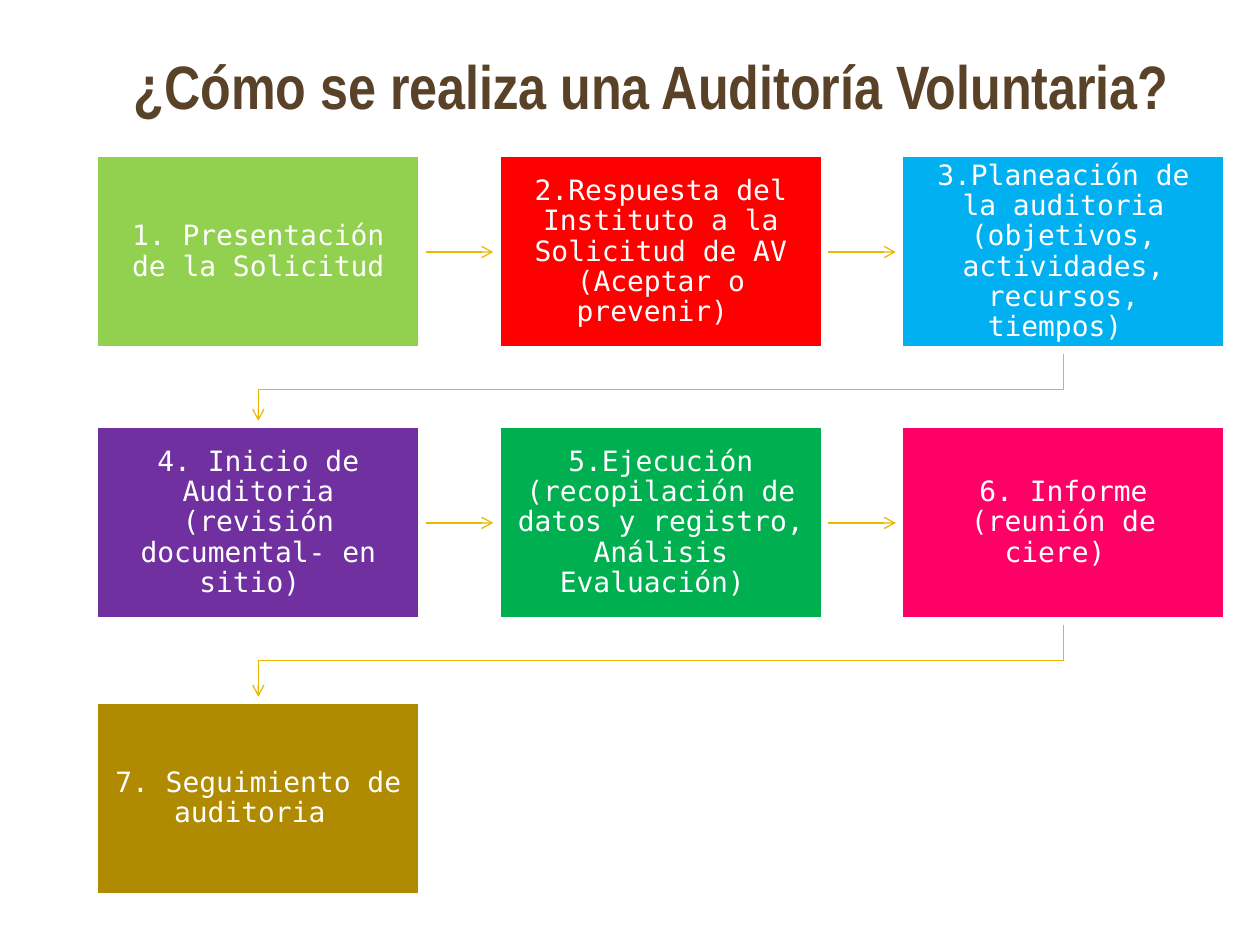
from dataclasses import dataclass

from lxml import etree
from pptx import Presentation
from pptx.dml.color import RGBColor
from pptx.enum.shapes import MSO_CONNECTOR, MSO_SHAPE
from pptx.enum.text import MSO_ANCHOR, PP_ALIGN
from pptx.oxml.ns import qn
from pptx.util import Inches, Pt

RECT = MSO_SHAPE.RECTANGLE
STRAIGHT = MSO_CONNECTOR.STRAIGHT
MIDDLE = MSO_ANCHOR.MIDDLE
CENTER = PP_ALIGN.CENTER
RIGHT_SIDE = 3


@dataclass(frozen=True)
class Theme:
    title_font: str = "Arial Narrow"
    body_font: str = "DejaVu Sans Mono"
    title_size: int = 35
    body_size: int = 16
    title_color: str = "594228"
    white: str = "FFFFFF"
    arrow: str = "EAB800"
    arrow_width: float = 0.75
    border_width: float = 4.33


class FlowSlide:
    LEFT, LAST_LEFT, COLS = 0.75, 7.14, 3
    ROW_TOPS = (1.22, 3.37, 5.56)
    BOX_W, BOX_H = 2.6, 1.56
    CLEARANCE, TURN = 0.03, 0.31

    def __init__(self, prs, theme):
        self.theme = theme
        self.s = prs.slides.add_slide(prs.slide_layouts[6])

    def cell(self, index):
        row, col = divmod(index, self.COLS)
        pitch = (self.LAST_LEFT - self.LEFT) / (self.COLS - 1)
        return self.LEFT + col * pitch, self.ROW_TOPS[row]

    def style_text(self, tf, text, font, size, color, inset, bold=False):
        tf.word_wrap = True
        tf.margin_left = tf.margin_right = Inches(inset)
        tf.margin_top = tf.margin_bottom = Inches(inset)
        tf.text = text
        p = tf.paragraphs[0]
        r = p.runs[0]
        r.font.name, r.font.size, r.font.bold = font, Pt(size), bold
        r.font.color.rgb = RGBColor.from_string(color)
        return p

    def title(self, text, left, top, width, height):
        t = self.theme
        sp = self.s.shapes.add_textbox(*map(Inches, (left, top, width, height)))
        self.style_text(sp.text_frame, text, t.title_font, t.title_size,
                        t.title_color, 0.05, bold=True)
        sp.text_frame.margin_top = Inches(0.1)

    def box(self, index, text, color):
        t = self.theme
        x, y = self.cell(index)
        sp = self.s.shapes.add_shape(
            RECT, *map(Inches, (x, y, self.BOX_W, self.BOX_H)))
        sp.shadow.inherit = False
        sp.fill.solid()
        sp.fill.fore_color.rgb = RGBColor.from_string(color)
        sp.line.color.rgb = RGBColor.from_string(t.white)
        sp.line.width = Pt(t.border_width)
        tf = sp.text_frame
        p = self.style_text(tf, text, t.body_font, t.body_size, t.white, 0.12)
        tf.vertical_anchor = MIDDLE
        p.alignment = CENTER
        p.line_spacing = 0.9
        return sp

    def style_arrow(self, sp):
        sp.line.color.rgb = RGBColor.from_string(self.theme.arrow)
        sp.line.width = Pt(self.theme.arrow_width)
        etree.SubElement(sp.line._get_or_add_ln(), qn("a:tailEnd"), type="arrow")

    def straight_arrow(self, index):
        x, y = self.cell(index)
        next_x, _ = self.cell(index + 1)
        mid = y + self.BOX_H / 2
        line = self.s.shapes.add_connector(STRAIGHT, *map(Inches, (
            x + self.BOX_W, mid, next_x - self.CLEARANCE, mid)))
        self.style_arrow(line)
        etree.SubElement(line._element.spPr, qn("a:effectLst"))
        return line

    def return_arrow(self, index):
        x, y = self.cell(index)
        next_x, next_y = self.cell(index + 1)
        start, end = x + self.BOX_W / 2, next_x + self.BOX_W / 2
        bottom = y + self.BOX_H
        turn = bottom + self.TURN
        points = [(start, bottom), (start, turn), (end, turn),
                  (end, next_y - self.CLEARANCE)]
        first, *rest = [(Inches(px), Inches(py)) for px, py in points]
        builder = self.s.shapes.build_freeform(*first)
        builder.add_line_segments(rest, close=False)
        sp = builder.convert_to_shape()
        sp.fill.background()
        self.style_arrow(sp)
        sp.shadow.inherit = False

    def flow(self, steps):
        straight = {}
        for i in range(len(steps) - 1):
            if (i + 1) % self.COLS:
                straight[i] = self.straight_arrow(i)
            else:
                self.return_arrow(i)
        for i, (text, color) in enumerate(steps):
            sp = self.box(i, text, color)
            if i in straight:
                straight[i].begin_connect(sp, RIGHT_SIDE)


STEPS = [
    ("1. Presentación de la Solicitud", "92D050"),
    ("2.Respuesta del Instituto a la Solicitud de AV (Aceptar o prevenir) ", "FF0000"),
    ("3.Planeación de la auditoria (objetivos, actividades, recursos, tiempos) ", "00B0F0"),
    ("4. Inicio de Auditoria (revisión documental- en sitio) ", "7030A0"),
    ("5.Ejecución (recopilación de datos y registro, Análisis Evaluación) ", "00B050"),
    ("6. Informe (reunión de ciere) ", "FF0066"),
    ("7. Seguimiento de auditoria ", "B08A00"),
]


def main():
    prs = Presentation()
    prs.slide_width, prs.slide_height = Inches(10), Inches(7.5)
    slide = FlowSlide(prs, Theme())
    slide.flow(STEPS)
    slide.title("¿Cómo se realiza una Auditoría Voluntaria?", 1.01, 0.28, 8.99, 1.31)
    prs.save("out.pptx")


if __name__ == "__main__":
    main()
